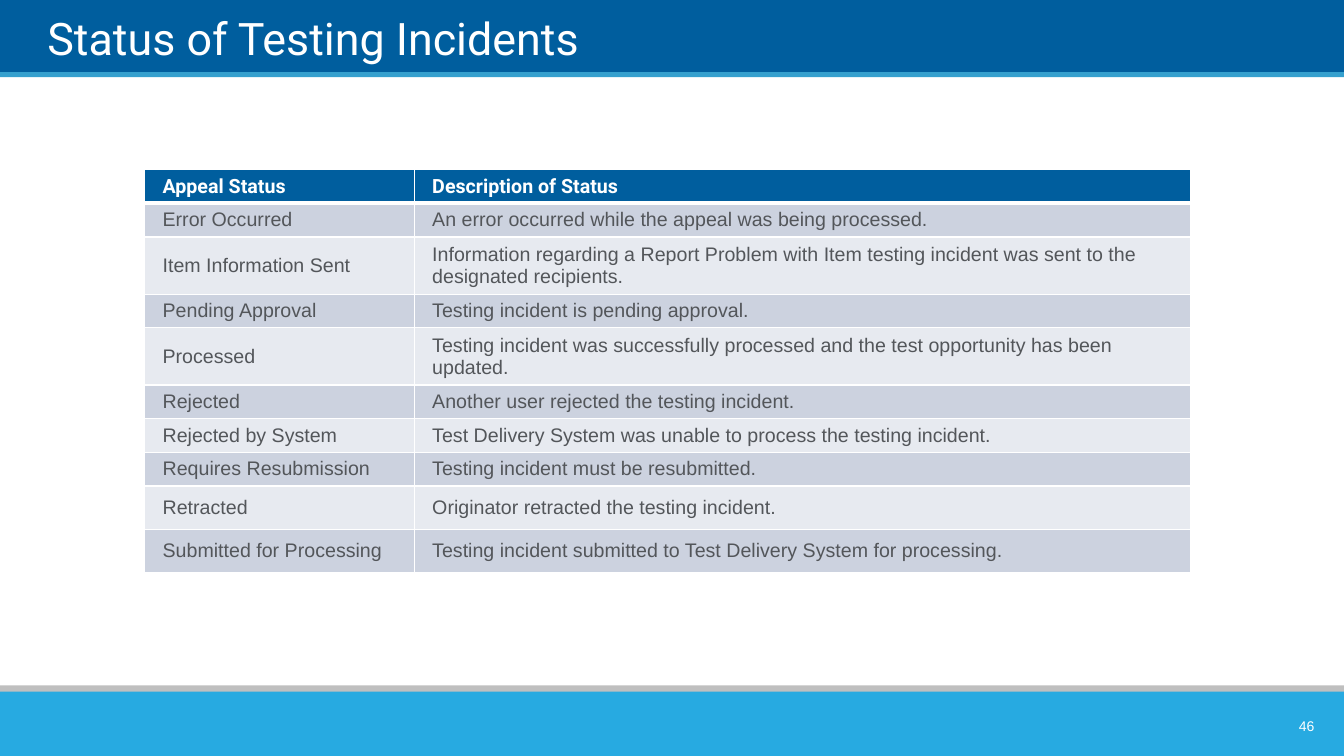
from dataclasses import dataclass

from lxml import etree
from pptx import Presentation
from pptx.dml.color import RGBColor
from pptx.enum.shapes import MSO_SHAPE
from pptx.enum.text import MSO_ANCHOR, MSO_AUTO_SIZE, PP_ALIGN
from pptx.oxml.ns import qn
from pptx.util import Pt

RECT = MSO_SHAPE.RECTANGLE
MIDDLE, BOTTOM = MSO_ANCHOR.MIDDLE, MSO_ANCHOR.BOTTOM
TOP = MSO_ANCHOR.TOP
LEFT, RIGHT = PP_ALIGN.LEFT, PP_ALIGN.RIGHT
NO_FIT = MSO_AUTO_SIZE.NONE


@dataclass
class Theme:
    navy: str = "005E9E"
    blue: str = "35A0CE"
    sky: str = "27AAE1"
    gray: str = "BFBFBF"
    white: str = "FFFFFF"
    ink: str = "53565A"
    bands: tuple = ("CCD2DF", "E7EAF0")
    head_font: str = "Roboto"
    body_font: str = "Arial"
    title_size: float = 32
    table_size: float = 14
    number_size: float = 10


def write(tf, text, *, font, size, color, bold=False, align=LEFT,
          anchor=TOP, indent=0):
    """Write one formatted paragraph into a text frame."""
    tf.word_wrap = True
    tf.vertical_anchor = anchor
    p = tf.paragraphs[0]
    p.alignment = align
    pPr = p._p.get_or_add_pPr()
    pPr.set("marL", str(Pt(indent)))
    pPr.set("indent", "0")
    r = p.add_run()
    r.text = text
    r.font.name, r.font.size, r.font.bold = font, Pt(size), bold
    r.font.color.rgb = RGBColor.from_string(color)


class Deck:
    def __init__(self, theme):
        self.theme = theme
        self.prs = Presentation()
        self.prs.slide_width, self.prs.slide_height = Pt(960), Pt(540)
        self.s = self.prs.slides.add_slide(self.prs.slide_layouts[5])

    def band(self, top, height, color):
        sp = self.s.shapes.add_shape(RECT, 0, Pt(top), self.prs.slide_width, Pt(height))
        sp.shadow.inherit = False
        sp.fill.solid()
        sp.fill.fore_color.rgb = RGBColor.from_string(color)
        sp.line.fill.background()

    def title(self, text, left, top, width, height):
        sp = self.s.shapes.title
        sp.left, sp.top, sp.width, sp.height = map(Pt, (left, top, width, height))
        tf = sp.text_frame
        tf.margin_left = tf.margin_right = tf.margin_top = tf.margin_bottom = 0
        tf.auto_size = NO_FIT
        write(tf, text, font=self.theme.head_font, size=self.theme.title_size,
              color=self.theme.white, anchor=BOTTOM)
        # Bring the title in front of the bands
        self.s.shapes._spTree.append(sp._element)

    def number(self, text, left, top, width, height):
        sp = self.s.shapes.add_textbox(*map(Pt, (left, top, width, height)))
        write(sp.text_frame, text, font=self.theme.body_font,
              size=self.theme.number_size, color=self.theme.white,
              align=RIGHT, anchor=MIDDLE)

    def borders(self, cell, **widths):
        tcPr = cell._tc.get_or_add_tcPr()
        for i, side in enumerate("LRTB"):
            ln = etree.Element(qn(f"a:ln{side}"), w=str(Pt(widths.get(side, 1))))
            fill = etree.SubElement(ln, qn("a:solidFill"))
            etree.SubElement(fill, qn("a:srgbClr"), val=self.theme.white)
            tcPr.insert(i, ln)

    def table(self, rows, left, top, widths, heights):
        t = self.theme
        tbl = self.s.shapes.add_table(
            len(rows), len(widths), Pt(left), Pt(top),
            Pt(sum(widths)), Pt(sum(heights))).table
        tbl.horz_banding = False
        for col, width in zip(tbl.columns, widths):
            col.width = Pt(width)
        for i, (row, height) in enumerate(zip(rows, heights)):
            tbl.rows[i].height = Pt(height)
            head = i == 0
            for j, text in enumerate(row):
                cell = tbl.cell(i, j)
                cell.fill.solid()
                cell.fill.fore_color.rgb = RGBColor.from_string(
                    t.navy if head else t.bands[(i - 1) % 2])
                write(cell.text_frame, text, size=t.table_size, bold=head,
                      font=t.head_font if head else t.body_font,
                      color=t.white if head else t.ink, indent=5.76)
                cell.vertical_anchor = TOP if head else MIDDLE
                # A thicker rule separates the header from the body
                self.borders(cell, T=3 if i == 1 else 1, B=3 if head else 1)


STATUSES = [
    ("Appeal Status", "Description of Status"),
    ("Error Occurred", "An error occurred while the appeal was being processed."),
    ("Item Information Sent", "Information regarding a Report Problem with Item testing "
     "incident was sent to the designated recipients."),
    ("Pending Approval", "Testing incident is pending approval."),
    ("Processed", "Testing incident was successfully processed and the test "
     "opportunity has been updated."),
    ("Rejected", "Another user rejected the testing incident."),
    ("Rejected by System",
     "Test Delivery System was unable to process the testing incident."),
    ("Requires Resubmission", "Testing incident must be resubmitted."),
    ("Retracted", "Originator retracted the testing incident."),
    ("Submitted for Processing",
     "Testing incident submitted to Test Delivery System for processing."),
]
ONE_LINE, TWO_LINES, TALL = 23.1, 38.6, 31


def main():
    theme = Theme()
    deck = Deck(theme)

    # Header and footer bands
    deck.band(-0.72, 54, theme.navy)
    deck.band(51.6, 3.6, theme.blue)
    deck.band(489.6, 10, theme.gray)
    deck.band(494, 46, theme.sky)

    # Title and slide number
    deck.title("Status of Testing Incidents", 33.84, 5, 867.6, 41)
    deck.number("46", 890.6, 507.6, 55.4, 21.6)

    # Status table
    heights = [ONE_LINE, ONE_LINE, TWO_LINES, ONE_LINE, TWO_LINES,
               ONE_LINE, ONE_LINE, ONE_LINE, TALL, TALL]
    deck.table(STATUSES, 103.2, 121.2, (192.6, 554.8), heights)

    deck.prs.save("out.pptx")


if __name__ == "__main__":
    main()
